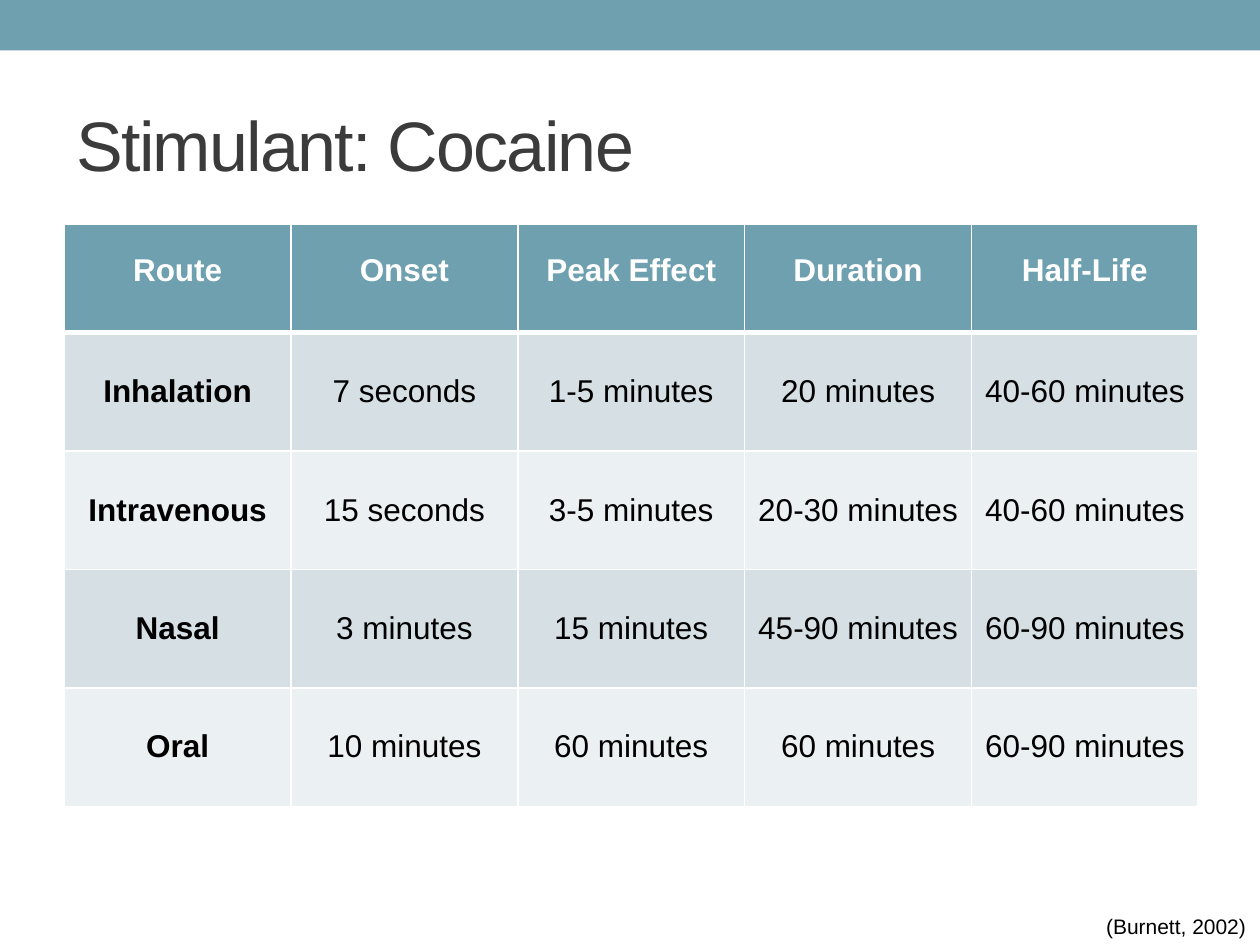
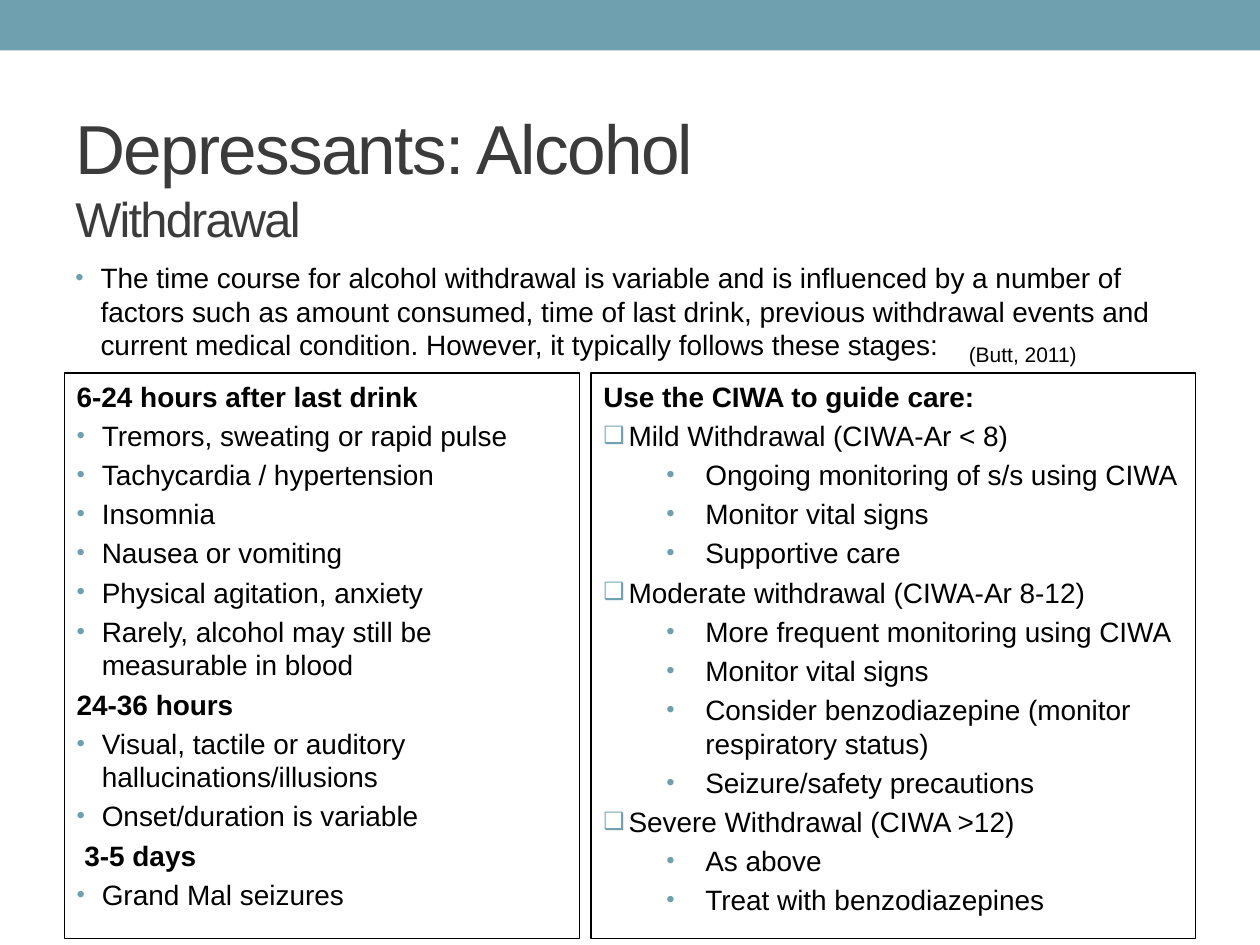
from lxml.etree import SubElement
from pptx import Presentation
from pptx.dml.color import RGBColor
from pptx.enum.shapes import MSO_SHAPE
from pptx.enum.text import MSO_ANCHOR, PP_ALIGN
from pptx.oxml.ns import qn
from pptx.util import Emu, Pt

FONT = "Arial"
TEAL, CHARCOAL, BLACK, WHITE = "6EA0B0", "3B3B3B", "000000", "FFFFFF"
ROW_TINTS = ("D5DFE4", "EBF0F2")
BODY_SIZE, CITATION_SIZE = 16, 12

HEADING = dict(bold=True, hanging=(20, -20), before=3.2)
BULLET = dict(bullet="•", hanging=(20, -20), before=3.2)
CHECKBOX = dict(bullet="❑", hanging=(20, -20), before=3.2)
SUB_BULLET = dict(bullet="•", hanging=(81, -31), before=3.2, level=1)

ROUTES = [
    ("Route", "Onset", "Peak Effect", "Duration", "Half-Life"),
    ("Inhalation", "7 seconds", "1-5 minutes", "20 minutes", "40-60 minutes"),
    ("Intravenous", "15 seconds", "3-5 minutes", "20-30 minutes", "40-60 minutes"),
    ("Nasal", "3 minutes", "15 minutes", "45-90 minutes", "60-90 minutes"),
    ("Oral", "10 minutes", "60 minutes", "60 minutes", "60-90 minutes"),
]

TIME_COURSE = (
    "The time course for alcohol withdrawal is variable and is influenced by a number of "
    "factors such as amount consumed, time of last drink, previous withdrawal events and "
    "current medical condition. However, it typically follows these stages:"
)

STAGES = [
    ("6-24 hours after last drink", HEADING),
    ("Tremors, sweating or rapid pulse", BULLET),
    ("Tachycardia / hypertension", BULLET),
    ("Insomnia", BULLET),
    ("Nausea or vomiting", BULLET),
    ("Physical agitation, anxiety", BULLET),
    ("Rarely, alcohol may still be measurable in blood", BULLET),
    ("24-36 hours", HEADING),
    ("Visual, tactile or auditory hallucinations/illusions", BULLET),
    ("Onset/duration is variable", BULLET),
    (" 3-5 days", HEADING),
    ("Grand Mal seizures", BULLET),
]

CIWA_CARE = [
    ("Use the CIWA to guide care:", HEADING),
    ("Mild Withdrawal (CIWA-Ar < 8)", CHECKBOX),
    ("Ongoing monitoring of s/s using CIWA", SUB_BULLET),
    ("Monitor vital signs", SUB_BULLET),
    ("Supportive care", SUB_BULLET),
    ("Moderate withdrawal (CIWA-Ar 8-12)", CHECKBOX),
    ("More frequent monitoring using CIWA", SUB_BULLET),
    ("Monitor vital signs", SUB_BULLET),
    ("Consider benzodiazepine (monitor respiratory status)", SUB_BULLET),
    ("Seizure/safety precautions", SUB_BULLET),
    ("Severe Withdrawal (CIWA >12)", CHECKBOX),
    ("As above", SUB_BULLET),
    ("Treat with benzodiazepines", SUB_BULLET),
]


def px(length):
    """Turn px, 100 to the inch, into EMU."""
    return Emu(length * 9144)


def rgb(hex_colour):
    return RGBColor.from_string(hex_colour)


def add_run(paragraph, text, size=BODY_SIZE, colour=BLACK, bold=False, spacing=0):
    run = paragraph.add_run()
    run.text = text
    run.font.name, run.font.size, run.font.bold = FONT, Pt(size), bold
    run.font.color.rgb = rgb(colour)
    if spacing:
        run.font._element.set("spc", str(spacing * 100))


def format_paragraph(paragraph, bullet=None, hanging=(0, 0), before=0, level=0):
    paragraph.alignment = PP_ALIGN.LEFT
    paragraph.level = level
    paragraph.space_before = Pt(before)
    properties = paragraph._p.get_or_add_pPr()
    properties.set("marL", str(px(hanging[0])))
    properties.set("indent", str(px(hanging[1])))
    if bullet:
        colour = SubElement(properties, qn("a:buClr"))
        SubElement(colour, qn("a:srgbClr"), val=TEAL)
        SubElement(properties, qn("a:buSzPct"), val="85000")
        SubElement(properties, qn("a:buFont"), typeface=FONT)
        SubElement(properties, qn("a:buChar"), char=bullet)
    else:
        SubElement(properties, qn("a:buNone"))


def fill_paragraphs(frame, paragraphs):
    """Write (text, format) pairs into a text frame, one paragraph each."""
    frame.word_wrap = True
    frame.vertical_anchor = MSO_ANCHOR.TOP
    for index, (text, style) in enumerate(paragraphs):
        paragraph = frame.add_paragraph() if index else frame.paragraphs[0]
        layout = {key: value for key, value in style.items() if key != "bold"}
        format_paragraph(paragraph, **layout)
        add_run(paragraph, text, bold=style.get("bold", False))


def add_border(cell, side, points):
    line = SubElement(cell._tc.get_or_add_tcPr(), qn(f"a:ln{side}"), w=str(Pt(points)))
    solid = SubElement(line, qn("a:solidFill"))
    SubElement(solid, qn("a:srgbClr"), val=WHITE)


class Deck:
    """Holds the presentation, its shared look and the current slide."""

    def __init__(self, width, height):
        self.presentation = Presentation()
        self.presentation.slide_width = px(width)
        self.presentation.slide_height = px(height)
        self.width = width
        self.shapes = None

    def start_slide(self):
        """Add a blank slide with the band along its top."""
        blank = self.presentation.slide_layouts[6]
        self.shapes = self.presentation.slides.add_slide(blank).shapes
        self.rectangle(0, 0, self.width, 40, fill=TEAL)

    def rectangle(self, left, top, width, height, fill=None, line=None):
        shape = self.shapes.add_shape(
            MSO_SHAPE.RECTANGLE, px(left), px(top), px(width), px(height))
        shape.shadow.inherit = False
        if fill:
            shape.fill.solid()
            shape.fill.fore_color.rgb = rgb(fill)
        else:
            shape.fill.background()
        if line:
            shape.line.color.rgb = rgb(line)
            shape.line.width = Pt(0.75)
        else:
            shape.line.fill.background()
        return shape

    def text_box(self, left, top, width, height):
        box = self.shapes.add_textbox(px(left), px(top), px(width), px(height))
        return box.text_frame

    def title(self, left, top, *lines):
        """Write (text, size) lines as one title paragraph."""
        frame = self.text_box(left, top, 900, 108)
        frame.word_wrap = True
        frame.vertical_anchor = MSO_ANCHOR.MIDDLE
        paragraph = frame.paragraphs[0]
        for index, (text, size) in enumerate(lines):
            if index:
                paragraph.add_line_break()
            add_run(paragraph, text, size=size, colour=CHARCOAL, spacing=-1)

    def citation(self, left, top, width, text):
        frame = self.text_box(left, top, width, 30)
        frame.word_wrap = False
        add_run(frame.paragraphs[0], text, size=CITATION_SIZE)

    def bullets(self, left, top, width, height, paragraphs):
        fill_paragraphs(self.text_box(left, top, width, height), paragraphs)

    def panel(self, left, top, width, height, paragraphs):
        outline = self.rectangle(left, top, width, height, line=BLACK)
        fill_paragraphs(outline.text_frame, paragraphs)

    def table(self, left, top, column_width, header_height, row_height, rows):
        columns = len(rows[0])
        height = header_height + row_height * (len(rows) - 1)
        table = self.shapes.add_table(
            len(rows), columns, px(left), px(top),
            px(column_width * columns), px(height)).table
        for column in table.columns:
            column.width = px(column_width)
        for r, texts in enumerate(rows):
            table.rows[r].height = px(row_height if r else header_height)
            for c, text in enumerate(texts):
                self.table_cell(table.cell(r, c), text, r, c)

    def table_cell(self, cell, text, r, c):
        is_header = r == 0
        borders = {"L": 1, "R": 1, "T": 3 if r == 1 else 1, "B": 3 if is_header else 1}
        for side, points in borders.items():
            add_border(cell, side, points)
        cell.fill.solid()
        cell.fill.fore_color.rgb = rgb(TEAL if is_header else ROW_TINTS[(r - 1) % 2])
        cell.vertical_anchor = MSO_ANCHOR.TOP if is_header else MSO_ANCHOR.MIDDLE
        if is_header:
            cell.margin_top = px(23)
        paragraph = cell.text_frame.paragraphs[0]
        paragraph.alignment = PP_ALIGN.CENTER
        add_run(paragraph, text, size=18, colour=WHITE if is_header else BLACK,
                bold=is_header or c == 0)


def main():
    deck = Deck(1000, 750)

    deck.start_slide()
    deck.title(51, 60, ("Stimulant: Cocaine", 40))
    deck.table(51, 178, 180, 86, 94, ROUTES)
    deck.citation(868, 720, 132, "(Burnett, 2002)")

    deck.start_slide()
    deck.title(50, 86, ("Depressants: Alcohol", 39.6), ("Withdrawal", 27.9))
    deck.panel(51, 296, 409, 449, STAGES)
    deck.bullets(50, 202, 900, 520, [(TIME_COURSE, {**BULLET, "before": 0})])
    deck.panel(469, 296, 480, 449, CIWA_CARE)
    deck.citation(759, 266, 111, "(Butt, 2011)")

    deck.presentation.save("out.pptx")


if __name__ == "__main__":
    main()
